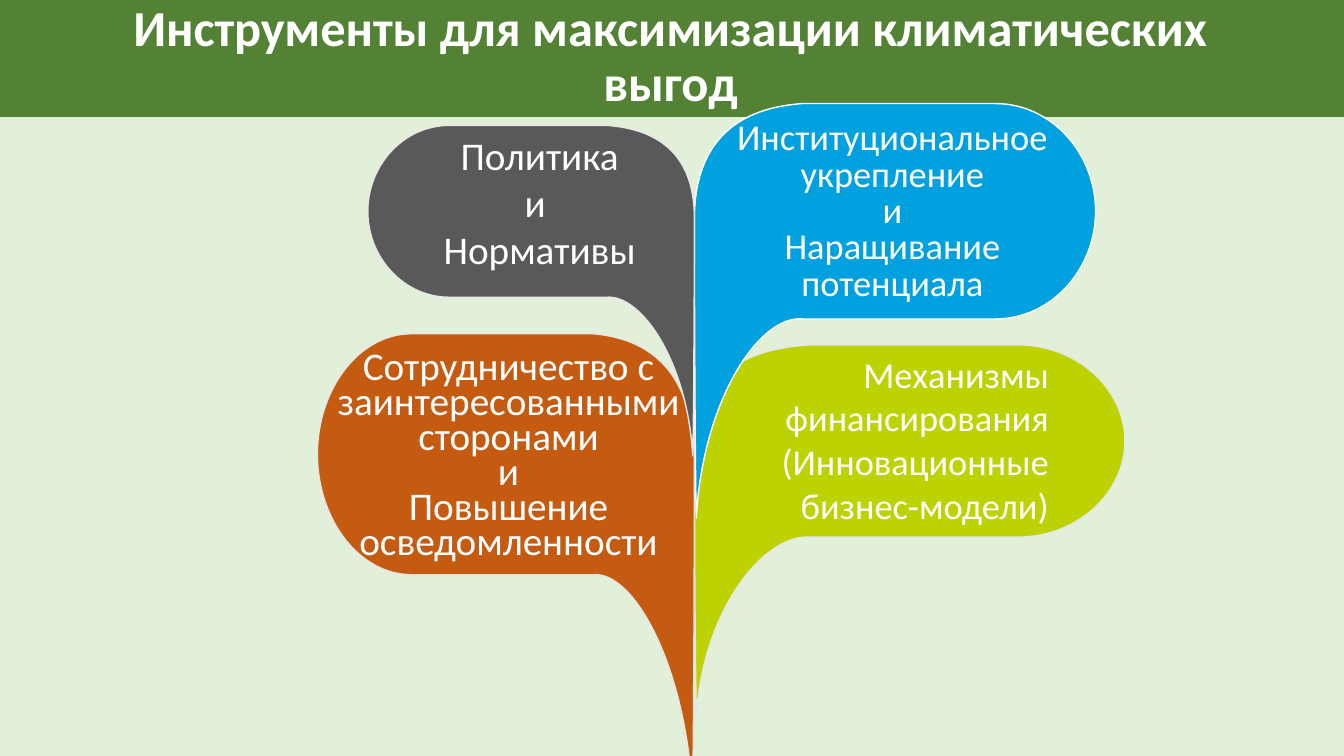
from collections import namedtuple

from lxml.etree import SubElement
from pptx import Presentation
from pptx.dml.color import RGBColor
from pptx.enum.shapes import MSO_SHAPE
from pptx.enum.text import MSO_ANCHOR, PP_ALIGN
from pptx.oxml.ns import qn
from pptx.util import Cm, Pt

WIDTH, HEIGHT = 33.87, 19.05
STEM = 17.5
LEAF_START = (0, 28)
LEAF_SEGMENTS = [
    [(0, 8), (12, 1), (27, 0)],
    [(75, 0)],
    [(89, 0), (100, 12), (100, 26)],
    [(100, 40), (89, 52), (75, 52)],
    [(27, 52)],
    [(16, 51), (2, 72), (0.5, 100)],
    [(0.2, 93), (0, 48), (0, 28)],
]

Leaf = namedtuple("Leaf", "side top width height fill line")
Label = namedtuple("Label", "dx dy width height size spacing align paragraphs")

LEAVES = [
    (Leaf(1, 8.69, 10.85, 9.32, "BDD203", "E7E6E6"),
     Label(0.38, 0.05, 8.81, 4.7, 26, None, PP_ALIGN.RIGHT,
           ["Механизмы финансирования (Инновационные бизнес-модели)"])),
    (Leaf(1, 2.61, 10.11, 10.44, "00A1DE", "FFFFFF"),
     Label(0.46, 0.33, 9.07, 4.9, 26, Pt(26), PP_ALIGN.CENTER,
           ["Институциональное укрепление", "и", "Наращивание потенциала"])),
    (Leaf(-1, 8.41, 9.5, 11.68, "C55A11", "E7E6E6"),
     Label(0, 0.38, 9.63, 5.64, 28, Pt(25), PP_ALIGN.CENTER,
           ["Сотрудничество с заинтересованными сторонами", "и",
            "Повышение осведомленности"])),
    (Leaf(-1, 3.16, 8.23, 8.33, "595959", "E7E6E6"),
     Label(0.99, 0.03, 6.68, 4.11, 28, None, PP_ALIGN.CENTER,
           ["Политика", "и ", "Нормативы"])),
]


def color(value):
    return RGBColor.from_string(value)


def add_band(slide, height, fill):
    sp = slide.shapes.add_shape(MSO_SHAPE.RECTANGLE, 0, 0, Cm(WIDTH), Cm(height))
    sp.shadow.inherit = False
    sp.fill.solid()
    sp.fill.fore_color.rgb = color(fill)
    sp.line.fill.background()


def add_text(slide, left, top, width, height, paragraphs, size, align,
             spacing=None, bold=False, anchor=MSO_ANCHOR.TOP):
    sp = slide.shapes.add_textbox(Cm(left), Cm(top), Cm(width), Cm(height))
    tf = sp.text_frame
    tf.word_wrap = True
    tf.vertical_anchor = anchor
    for i, text in enumerate(paragraphs):
        p = tf.add_paragraph() if i else tf.paragraphs[0]
        p.alignment = align
        p.line_spacing = spacing
        r = p.add_run()
        r.text = text
        r.font.name = "Calibri"
        r.font.size = Pt(size)
        r.font.bold = bold
        r.font.color.rgb = color("FFFFFF")


def leaf_point(leaf, point):
    x, y = point
    return (Cm(STEM + leaf.side * leaf.width * x / 100),
            Cm(leaf.top + leaf.height * y / 100))


def bend_edges(sp, leaf):
    edges = sp._element.xpath(".//a:lnTo")
    for edge, segment in zip(edges, LEAF_SEGMENTS):
        if len(segment) == 1:
            continue
        edge.clear()
        edge.tag = qn("a:cubicBezTo")
        for point in segment:
            x, y = leaf_point(leaf, point)
            SubElement(edge, qn("a:pt"), x=str(x - sp.left), y=str(y - sp.top))


def add_leaf(slide, leaf):
    builder = slide.shapes.build_freeform(*leaf_point(leaf, LEAF_START))
    builder.add_line_segments([leaf_point(leaf, s[-1]) for s in LEAF_SEGMENTS], close=True)
    sp = builder.convert_to_shape()
    bend_edges(sp, leaf)
    sp.shadow.inherit = False
    sp.fill.solid()
    sp.fill.fore_color.rgb = color(leaf.fill)
    sp.line.color.rgb = color(leaf.line)
    sp.line.width = Pt(1)


def add_label(slide, leaf, label):
    left = STEM if leaf.side > 0 else STEM - leaf.width
    add_text(slide, left + label.dx, leaf.top + label.dy, label.width, label.height,
             label.paragraphs, label.size, label.align, label.spacing)


def add_title(slide, left, top, width, height):
    add_text(slide, left, top, width, height,
             ["Инструменты для максимизации климатических выгод"],
             36, PP_ALIGN.CENTER, 0.9, True, MSO_ANCHOR.MIDDLE)


def main():
    prs = Presentation()
    prs.slide_width, prs.slide_height = Cm(WIDTH), Cm(HEIGHT)
    slide = prs.slides.add_slide(prs.slide_layouts[6])
    add_band(slide, HEIGHT, "E2F0D9")
    add_band(slide, 2.95, "548235")
    for leaf, _ in LEAVES:
        add_leaf(slide, leaf)
    for leaf, label in reversed(LEAVES):
        add_label(slide, leaf, label)
    add_title(slide, 1.37, 0.81, 31.06, 1.3)
    prs.save("out.pptx")


if __name__ == "__main__":
    main()
